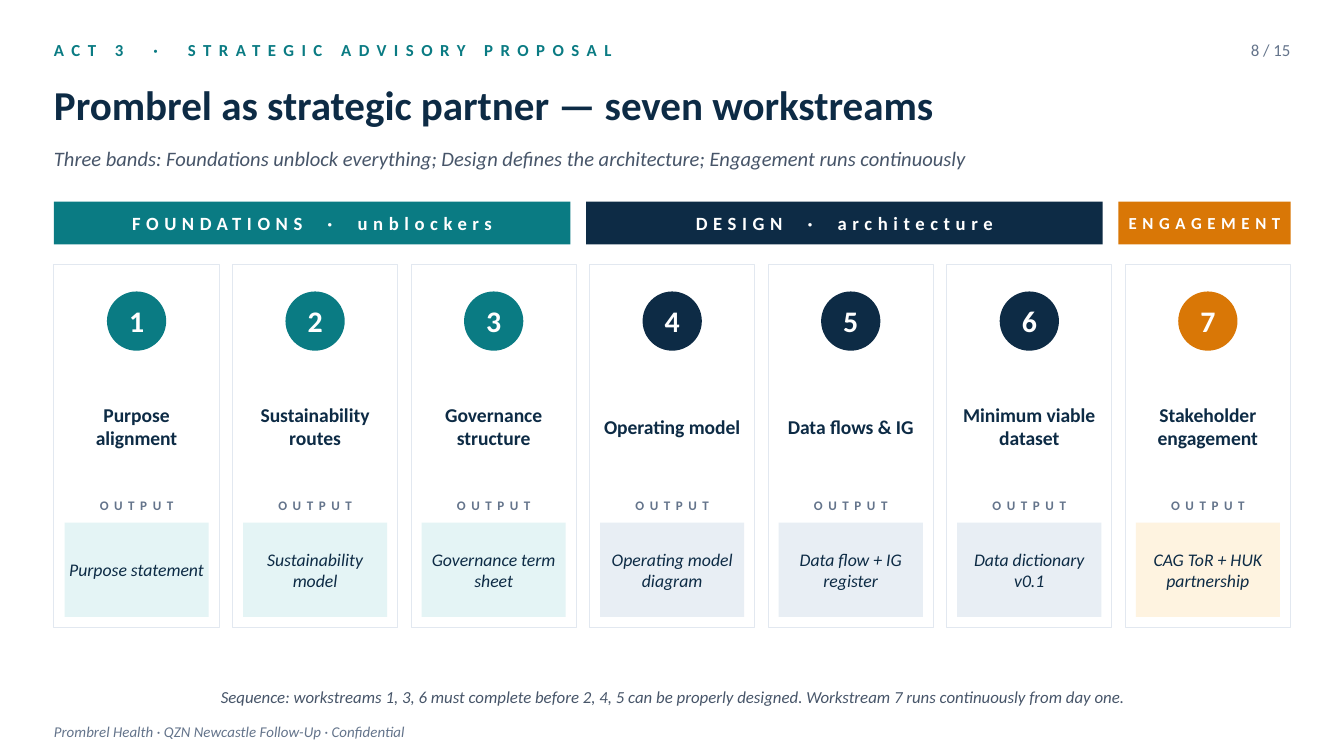
import pptx
import pptx.dml.color
import pptx.enum.shapes
import pptx.enum.text
import pptx.util

Cm = pptx.util.Cm
Align = pptx.enum.text.PP_ALIGN
Kind = pptx.enum.shapes.MSO_SHAPE

TEAL, NAVY, ORANGE = "0A7B83", "0D2B45", "D97706"
WHITE, SLATE, GREY, BORDER = "FFFFFF", "475569", "64748B", "E2E8F0"

MARGIN, CONTENT_WIDTH = 1.02, 23.37
BAND_GAP, CARD_GAP = 0.3, 0.25

# Each band: label, text size, colour, tint, workstreams as (name, output)
BANDS = [
    ("FOUNDATIONS  ·  unblockers", 10, TEAL, "E4F4F5", [
        ("Purpose alignment", "Purpose statement"),
        ("Sustainability routes", "Sustainability model"),
        ("Governance structure", "Governance term sheet"),
    ]),
    ("DESIGN  ·  architecture", 10, NAVY, "E8EEF4", [
        ("Operating model", "Operating model diagram"),
        ("Data flows & IG", "Data flow + IG register"),
        ("Minimum viable dataset", "Data dictionary v0.1"),
    ]),
    ("ENGAGEMENT", 9, ORANGE, "FEF3E0", [
        ("Stakeholder engagement", "CAG ToR + HUK partnership"),
    ]),
]


def colour(hex_code):
    return pptx.dml.color.RGBColor.from_string(hex_code)


def write(box, text, size, ink, bold=False, italic=False,
          align=Align.CENTER, tracking=0):
    """Fill a box with one paragraph; tracking is in points."""
    frame = box.text_frame
    frame.word_wrap = True
    frame.auto_size = pptx.enum.text.MSO_AUTO_SIZE.NONE
    frame.vertical_anchor = pptx.enum.text.MSO_ANCHOR.MIDDLE
    frame.margin_left = frame.margin_right = 0
    frame.margin_top = frame.margin_bottom = 0
    para = frame.paragraphs[0]
    span = para.add_run()
    span.text = text
    if tracking:
        span._r.get_or_add_rPr().set("spc", str(tracking * 100))
    para.alignment = align
    para.font.name = "Calibri"
    para.font.size = pptx.util.Pt(size)
    para.font.bold = bold
    para.font.italic = italic
    para.font.color.rgb = colour(ink)


def add_label(page, left, top, width, height, text, size, ink, **style):
    box = page.shapes.add_textbox(Cm(left), Cm(top), Cm(width), Cm(height))
    write(box, text, size, ink, **style)


def add_block(page, kind, left, top, width, height, fill, border=None):
    block = page.shapes.add_shape(
        kind, Cm(left), Cm(top), Cm(width), Cm(height))
    block.shadow.inherit = False
    block.fill.solid()
    block.fill.fore_color.rgb = colour(fill)
    if border:
        block.line.color.rgb = colour(border)
        block.line.width = pptx.util.Pt(0.5)
    else:
        block.line.fill.background()
    return block


def build_header(page, left, top, width):
    # Section marker and page count
    add_label(page, left, top, 15.24, 0.76,
              "ACT 3  ·  STRATEGIC ADVISORY PROPOSAL", 9, TEAL,
              bold=True, align=Align.LEFT, tracking=4)
    add_label(page, left + width - 1.27, top, 1.27, 0.76, "8 / 15", 9, GREY,
              align=Align.RIGHT)
    # Title and subtitle
    title = page.shapes.title
    title.left, title.top = Cm(left), Cm(top + 0.71)
    title.width, title.height = Cm(width), Cm(1.4)
    write(title, "Prombrel as strategic partner — seven workstreams", 22, NAVY,
          bold=True, align=Align.LEFT)
    add_label(page, left, top + 2.03, width, 0.81,
              "Three bands: Foundations unblock everything; Design defines "
              "the architecture; Engagement runs continuously", 11, SLATE,
              italic=True, align=Align.LEFT)


def build_bands(page, left, top, width, height):
    """Each band is as wide as its share of the workstreams."""
    count = sum(len(band[-1]) for band in BANDS)
    unit = (width - BAND_GAP * (len(BANDS) - 1)) / count
    for label, size, fill, _, streams in BANDS:
        band_width = unit * len(streams)
        band = add_block(page, Kind.RECTANGLE, left, top, band_width, height,
                         fill)
        write(band, label, size, WHITE, bold=True, tracking=3)
        left += band_width + BAND_GAP


def build_card(page, left, top, width, height, number, name, output,
               accent, tint):
    add_block(page, Kind.RECTANGLE, left, top, width, height, WHITE, BORDER)
    # Number badge
    badge_size = 1.12
    badge = add_block(page, Kind.OVAL, left + (width - badge_size) / 2,
                      top + 0.51, badge_size, badge_size, accent)
    write(badge, str(number), 16, WHITE, bold=True)
    # Name and output
    add_label(page, left + 0.15, top + 1.98, width - 0.3, 2.16, name, 10.5,
              NAVY, bold=True)
    add_label(page, left + 0.15, top + 4.32, width - 0.3, 0.46, "OUTPUT", 7,
              GREY, bold=True, tracking=3)
    result = add_block(page, Kind.RECTANGLE, left + 0.2, top + 4.88,
                       width - 0.4, 1.78, tint)
    write(result, output, 9.5, NAVY, italic=True)


def build_cards(page, left, top, width, height):
    cards = [(name, output, accent, tint)
             for _, _, accent, tint, streams in BANDS
             for name, output in streams]
    card_width = (width - CARD_GAP * (len(cards) - 1)) / len(cards)
    for index, card in enumerate(cards):
        build_card(page, left + index * (card_width + CARD_GAP), top,
                   card_width, height, index + 1, *card)


def build_footer(page, left, top, width):
    add_label(page, left, top, width, 0.56,
              "Sequence: workstreams 1, 3, 6 must complete before 2, 4, 5 can "
              "be properly designed. Workstream 7 runs continuously from day "
              "one.", 9, SLATE, italic=True)
    add_label(page, left, top + 0.64, width, 0.56,
              "Prombrel Health · QZN Newcastle Follow-Up · Confidential", 8,
              GREY, italic=True, align=Align.LEFT)


def main():
    deck = pptx.Presentation()
    deck.slide_width, deck.slide_height = Cm(25.4), Cm(14.29)
    page = deck.slides.add_slide(deck.slide_layouts.get_by_name("Title Only"))
    build_header(page, MARGIN, 0.56, CONTENT_WIDTH)
    build_bands(page, MARGIN, 3.81, CONTENT_WIDTH, 0.81)
    build_cards(page, MARGIN, 5, CONTENT_WIDTH, 6.86)
    build_footer(page, MARGIN, 12.9, CONTENT_WIDTH)
    deck.save("out.pptx")


if __name__ == "__main__":
    main()
